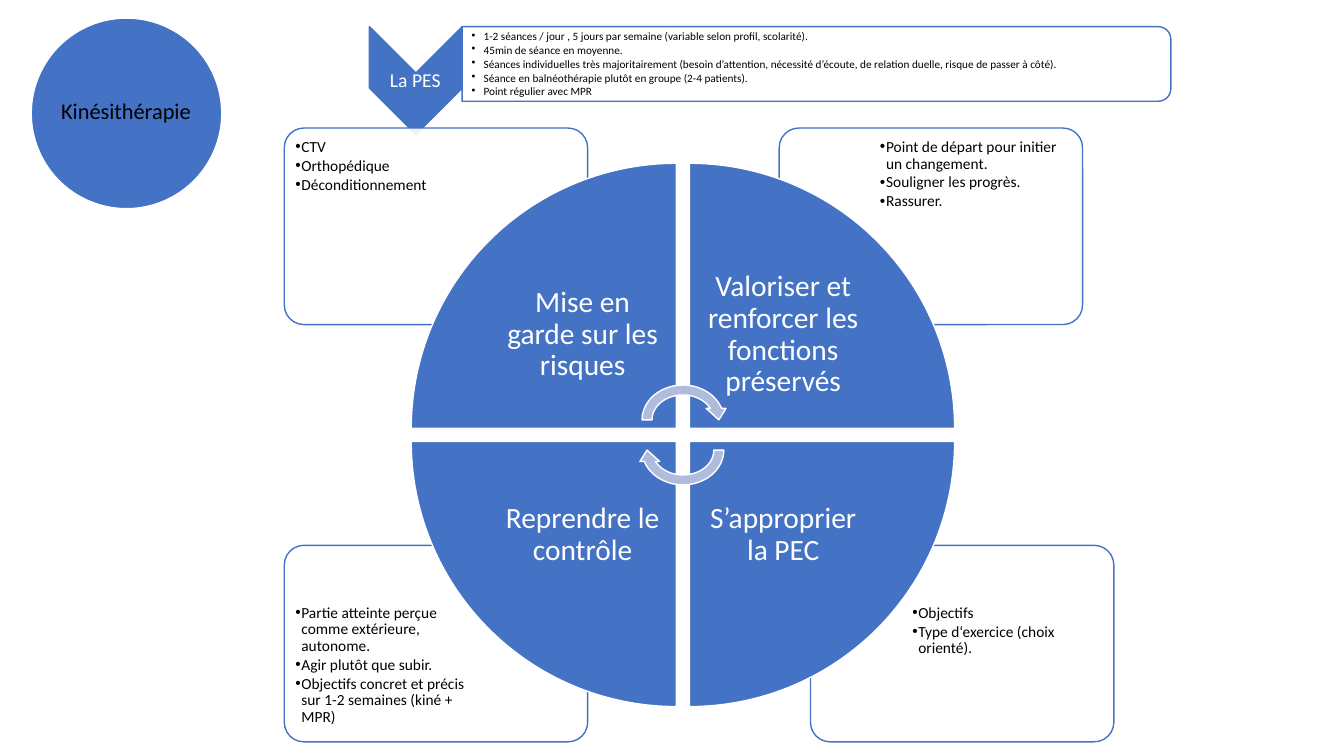
import pptx
import pptx.dml.color
import pptx.enum.shapes
import pptx.enum.text
import pptx.oxml
import pptx.oxml.ns
import pptx.util

RGBColor = pptx.dml.color.RGBColor
BLUE = RGBColor(0x44, 0x72, 0xC4)
PALE = RGBColor(0xB0, 0xBC, 0xDE)
WHITE = RGBColor(0xFF, 0xFF, 0xFF)
BLACK = RGBColor(0x00, 0x00, 0x00)
KIND = pptx.enum.shapes.MSO_SHAPE
ALIGN = pptx.enum.text.PP_ALIGN
ANCHOR = pptx.enum.text.MSO_ANCHOR
WIDE, HIGH = 13.333, 7.5
COLS, ROWS = 133.33, 75

PES = """1-2 séances / jour , 5 jours par semaine (variable selon profil, scolarité).
45min de séance en moyenne.
Séances individuelles très majoritairement (besoin d’attention, nécessité d’écoute, de relation duelle, risque de passer à côté).
Séance en balnéothérapie plutôt en groupe (2-4 patients).
Point régulier avec MPR"""

PARTS = [
    {"x": 0, "y": 0, "box": 28.2, "list": 28.7, "turn": 0,
     "name": "Mise en garde sur les risques",
     "items": "CTV\nOrthopédique\nDéconditionnement"},
    {"x": 1, "y": 0, "box": 77.3, "list": 86.7, "turn": 90,
     "name": "Valoriser et renforcer les fonctions préservés",
     "items": "Point de départ pour initier un changement.\nSouligner les progrès.\nRassurer."},
    {"x": 1, "y": 1, "box": 80.4, "list": 89.9, "turn": 180,
     "name": "S’approprier la PEC",
     "items": "Objectifs\nType d‘exercice (choix orienté)."},
    {"x": 0, "y": 1, "box": 28.2, "list": 28.7, "turn": 270,
     "name": "Reprendre le contrôle",
     "items": "Partie atteinte perçue comme extérieure, autonome.\nAgir plutôt que subir.\n"
              "Objectifs concret et précis sur 1-2 semaines (kiné + MPR)"},
]


def write(frame, text, size=11, color=BLACK, inset=0.06, left=None, hang=0):
    """Fill a text frame: bulleted when hang is set, otherwise centred."""
    frame.word_wrap = True
    frame.auto_size = pptx.enum.text.MSO_AUTO_SIZE.NONE
    frame.margin_top = frame.margin_bottom = frame.margin_right = pptx.util.Inches(inset)
    frame.margin_left = pptx.util.Inches(inset if left is None else left)
    frame.vertical_anchor = ANCHOR.TOP if hang else ANCHOR.MIDDLE
    frame.text = text
    for para in frame.paragraphs:
        para.alignment = ALIGN.LEFT if hang else ALIGN.CENTER
        para.line_spacing = 0.9
        para.space_before = pptx.util.Pt(0)
        para.space_after = pptx.util.Pt(size * (0.15 if hang else 0.35))
        if hang:
            props = para._p.get_or_add_pPr()
            props.set("marL", str(pptx.util.Inches(hang)))
            props.set("indent", str(-pptx.util.Inches(hang)))
            props.append(pptx.oxml.parse_xml(
                f'<a:buChar {pptx.oxml.ns.nsdecls("a")} char="•"/>'))
        for run in para.runs:
            run.font.name = "Calibri"
            run.font.size = pptx.util.Pt(size)
            run.font.bold = False
            run.font.color.rgb = color


class Board:
    """Draw styled elements on one slide, placed by grid column and row."""

    def __init__(self, slide):
        self.slide = slide

    def area(self, col, row, wide, high):
        """Turn grid units into lengths."""
        x, y = WIDE / COLS, HIGH / ROWS
        return [pptx.util.Inches(v) for v in (col * x, row * y, wide * x, high * y)]

    def shape(self, kind, area, fill=BLUE, line=WHITE, turn=0, clear=False, curve=None):
        """Add a filled preset shape."""
        item = self.slide.shapes.add_shape(kind, *self.area(*area))
        item.shadow.inherit = False
        item.fill.solid()
        item.fill.fore_color.rgb = fill
        item.line.color.rgb = line
        item.line.width = pptx.util.Pt(1)
        item.rotation = turn
        if curve is not None:
            item.adjustments[0] = curve
        if clear:
            color = item.element.xpath("./p:spPr/a:solidFill/a:srgbClr")[0]
            color.append(pptx.oxml.parse_xml(
                f'<a:alpha {pptx.oxml.ns.nsdecls("a")} val="90000"/>'))

    def label(self, area, text, **style):
        """Add a text box."""
        item = self.slide.shapes.add_textbox(*self.area(*area))
        write(item.text_frame, text, **style)

    def holder(self, index, area, text, **style):
        """Place a template placeholder in front and fill it."""
        item = self.slide.placeholders[index]
        item.left, item.top, item.width, item.height = self.area(*area)
        self.slide.shapes.element.append(item.element)
        write(item.text_frame, text, **style)


def main():
    """Build and save the slide."""
    deck = pptx.Presentation()
    deck.slide_width = pptx.util.Inches(WIDE)
    deck.slide_height = pptx.util.Inches(HIGH)
    board = Board(deck.slides.add_slide(deck.slide_layouts.get_by_name("Comparison")))

    board.shape(KIND.OVAL, (3.1, 1.8, 18.9, 18.9))
    board.holder(0, (5.8, 4.5, 13.4, 13.3), "Kinésithérapie", size=16, inset=0.02)

    board.shape(KIND.CHEVRON, (35.9, 3.4, 10.7, 9.2), line=BLUE, turn=90)
    board.label((36.6, 6.4, 9.2, 3.2), "La PES", size=14, color=WHITE, inset=0.01)
    board.shape(KIND.ROUND_2_SAME_RECTANGLE, (77.3, -28.8, 7.4, 70.3),
                fill=WHITE, line=BLUE, turn=90, clear=True)
    board.label((45.8, 3, 69.7, 6.7), PES, size=8, inset=0.01, left=0.1, hang=0.12)

    for index, part in enumerate(PARTS, 1):
        row = 12.7 + 41.4 * part["y"]
        board.shape(KIND.ROUNDED_RECTANGLE, (part["box"], row, 30.1, 19.5),
                    fill=WHITE, line=BLUE, clear=True, curve=0.1)
        board.holder(index, (part["list"], row + 0.5 + 4.8 * part["y"], 20.2, 13.7),
                     part["items"], hang=0.06)

    side, text = 26.3, 18.6
    for part in PARTS:
        col, row = 40.8 + 27.6 * part["x"], 16.2 + 27.6 * part["y"]
        board.shape(KIND.PIE_WEDGE, (col, row, side, side), turn=part["turn"])
        spot = (col + (side - text) * (1 - part["x"]),
                row + (side - text) * (1 - part["y"]), text, text)
        board.label(spot, part["name"], size=21, color=WHITE, inset=0.16)

    for row, turn in ((37.7, 0), (40.7, 180)):
        board.shape(KIND.CIRCULAR_ARROW, (63.2, row, 9.1, 7.9), fill=PALE, turn=turn)

    deck.save("out.pptx")


if __name__ == "__main__":
    main()
